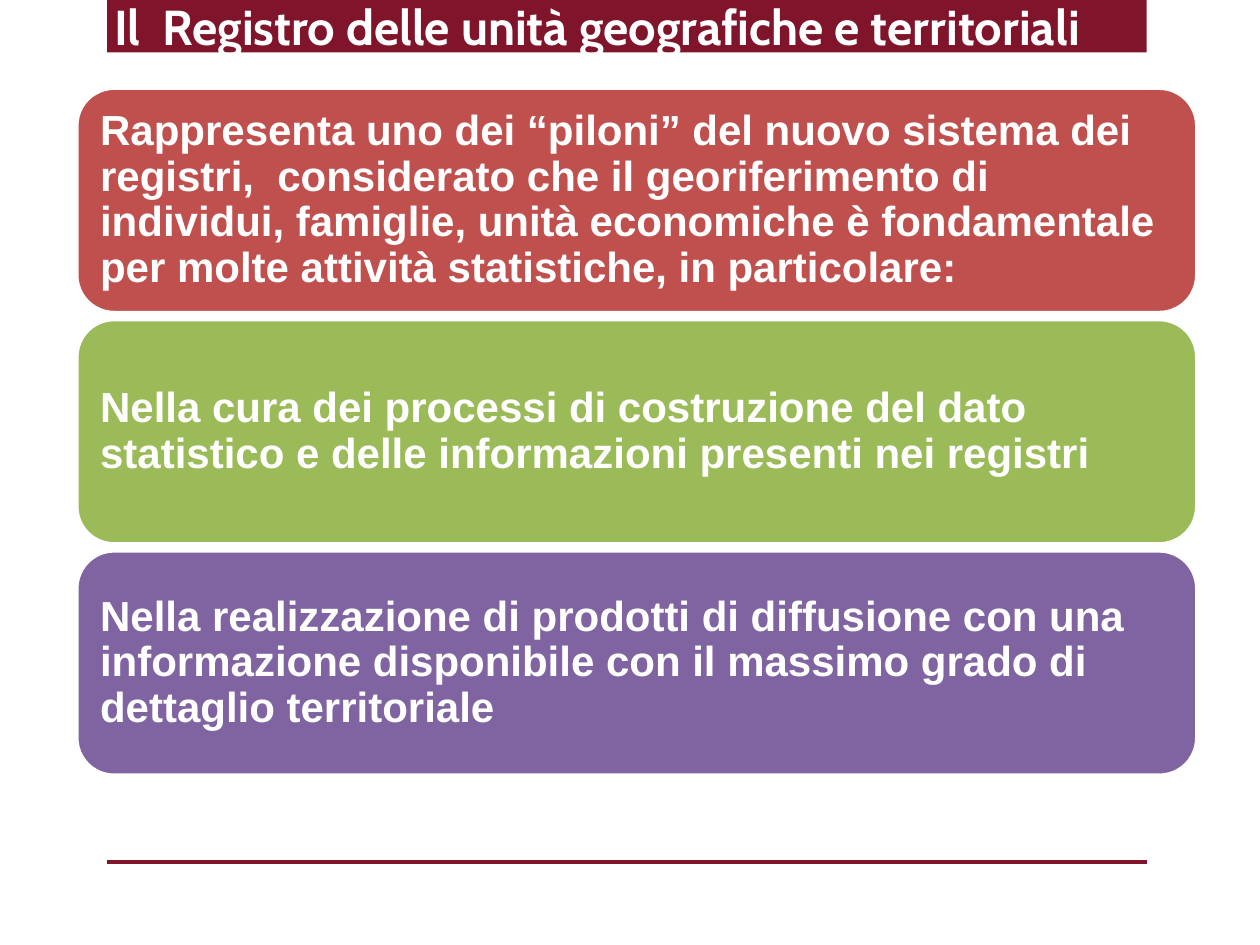
from lxml import etree
from pptx import Presentation
from pptx.dml.color import RGBColor
from pptx.enum import shapes, text
from pptx.oxml.ns import qn
from pptx.util import Pt

MAROON, WHITE = "7F142A", "FFFFFF"
PANELS = [
    ("C0504D", "Rappresenta uno dei “piloni” del nuovo sistema dei registri,  "
               "considerato che il georiferimento di individui, famiglie, unità "
               "economiche è fondamentale per molte attività statistiche, in particolare:"),
    ("9BBB59", "Nella cura dei processi di costruzione del dato statistico e delle "
               "informazioni presenti nei registri"),
    ("8064A2", "Nella realizzazione di prodotti di diffusione con una informazione "
               "disponibile con il massimo grado di dettaglio territoriale"),
]


def color(value):
    return RGBColor.from_string(value)


def write(tf, words, size, font, hue=WHITE, anchor=text.MSO_ANCHOR.TOP, spacing=1.0):
    tf.word_wrap = True
    tf.vertical_anchor = anchor
    p = tf.paragraphs[0]
    p.alignment = text.PP_ALIGN.LEFT
    p.line_spacing = spacing
    r = p.add_run()
    r.text = words
    r.font.size, r.font.name, r.font.bold = Pt(size), font, True
    r.font.color.rgb = color(hue)


def add_box(slide, kind, box, fill, line=None):
    sp = slide.shapes.add_shape(kind, *map(Pt, box))
    sp.shadow.inherit = False
    sp.fill.solid()
    sp.fill.fore_color.rgb = color(fill)
    if line:
        sp.line.color.rgb = color(line)
        sp.line.width = Pt(2)
    else:
        sp.line.fill.background()
    return sp


def add_header(slide, box):
    left, top, width, height = box
    band = add_box(slide, shapes.MSO_SHAPE.RECTANGLE, box, MAROON)
    title = slide.shapes.title
    title.left, title.top = Pt(left - 2.9), Pt(top - 5.8)
    title.width, title.height = Pt(width + 1.4), Pt(41.2)
    title.text_frame.auto_size = text.MSO_AUTO_SIZE.SHAPE_TO_FIT_TEXT
    write(title.text_frame, "Il  Registro delle unità geografiche e territoriali", 28, "Cabin")
    # The band goes behind the title
    title._element.addprevious(band._element)


def add_panels(slide, box, gap):
    left, top, width, height = box
    step = (height + gap) / len(PANELS)
    for i, (fill, words) in enumerate(PANELS):
        sp = add_box(slide, shapes.MSO_SHAPE.ROUNDED_RECTANGLE,
                     (left, top + i * step, width, step - gap), fill, WHITE)
        tf = sp.text_frame
        tf.margin_left = tf.margin_right = tf.margin_top = tf.margin_bottom = Pt(7.2)
        write(tf, words, 24, "Arial", anchor=text.MSO_ANCHOR.MIDDLE, spacing=0.9)


def add_footer_rule(slide, box):
    left, top, width, _ = box
    rule = slide.shapes.add_connector(shapes.MSO_CONNECTOR.STRAIGHT,
                                      Pt(left), Pt(top), Pt(left + width), Pt(top))
    rule.line.color.rgb = color(MAROON)
    rule.line.width = Pt(2)
    etree.SubElement(rule._element.spPr, qn("a:effectLst"))


def main():
    prs = Presentation()
    prs.slide_width, prs.slide_height = Pt(720), Pt(540)
    slide = prs.slides.add_slide(prs.slide_layouts[5])
    # Title band, footer rule, then the three stacked panels
    add_header(slide, (61.2, 0, 594, 30))
    add_footer_rule(slide, (61.2, 492.5, 594, 0))
    add_panels(slide, (43.9, 50.4, 640, 392.6), gap=4)
    prs.save("out.pptx")


if __name__ == "__main__":
    main()
